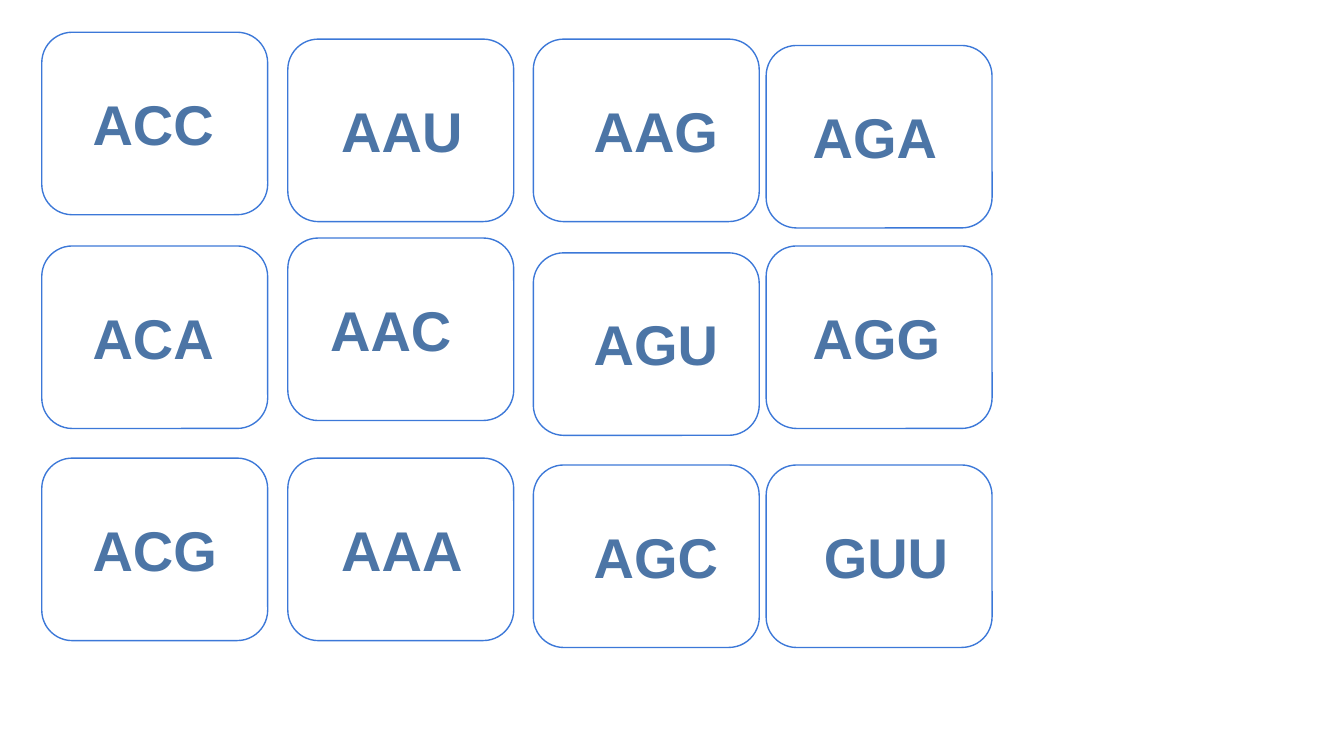
from pptx import Presentation
from pptx.dml.color import RGBColor
from pptx.enum.shapes import MSO_SHAPE
from pptx.enum.text import MSO_AUTO_SIZE
from pptx.util import Cm, Pt

# Each column: card left, label inset, then (codon, card top) downwards
COLUMNS = [
    (0.79, 0.71, [("ACC", 0.61), ("ACA", 4.65), ("ACG", 8.66)]),
    (5.44, 0.76, [("AAU", 0.74), ("AAC", 4.5), ("AAA", 8.66)]),
    (10.08, 0.89, [("AAG", 0.74), ("AGU", 4.78), ("AGC", 8.79)]),
    (14.48, 0.63, [("AGA", 0.86), ("AGG", 4.65), ("GUU", 8.79)]),
]
NUDGE = {"AAC": -0.21, "GUU": 0.21}
CARD = (4.27, 3.45)
LABEL = (8.33, 1.8)
DROP = 0.83
FONT = {"name": "Arial", "size": Pt(30), "bold": True}
MARGIN = Cm(0.25)
FRAME = {
    "word_wrap": True,
    "auto_size": MSO_AUTO_SIZE.SHAPE_TO_FIT_TEXT,
    "margin_left": MARGIN,
    "margin_right": MARGIN,
    "margin_top": MARGIN,
    "margin_bottom": MARGIN,
}


def color(value):
    return RGBColor.from_string(value)


def apply(target, values):
    for name, value in values.items():
        setattr(target, name, value)


def add_card(slide, left, top):
    card = slide.shapes.add_shape(
        MSO_SHAPE.ROUNDED_RECTANGLE, *map(Cm, (left, top, *CARD)))
    card.shadow.inherit = False
    card.adjustments[0] = 0.167
    card.fill.solid()
    card.fill.fore_color.rgb = color("FFFFFF")
    card.line.color.rgb = color("3C78D8")
    card.line.width = Pt(0.75)


def add_label(slide, codon, left, top):
    box = slide.shapes.add_textbox(*map(Cm, (left, top, *LABEL)))
    apply(box.text_frame, FRAME)
    run = box.text_frame.paragraphs[0].add_run()
    run.text = codon
    apply(run.font, FONT)
    run.font.color.rgb = color("4C75A6")


def main():
    deck = Presentation()
    deck.slide_width, deck.slide_height = Cm(25.4), Cm(14.29)
    slide = deck.slides.add_slide(deck.slide_layouts[6])
    for left, inset, codons in COLUMNS:
        for codon, top in codons:
            add_card(slide, left, top)
            shift = inset + NUDGE.get(codon, 0)
            add_label(slide, codon, left + shift, top + DROP)
    deck.save("out.pptx")


if __name__ == "__main__":
    main()
